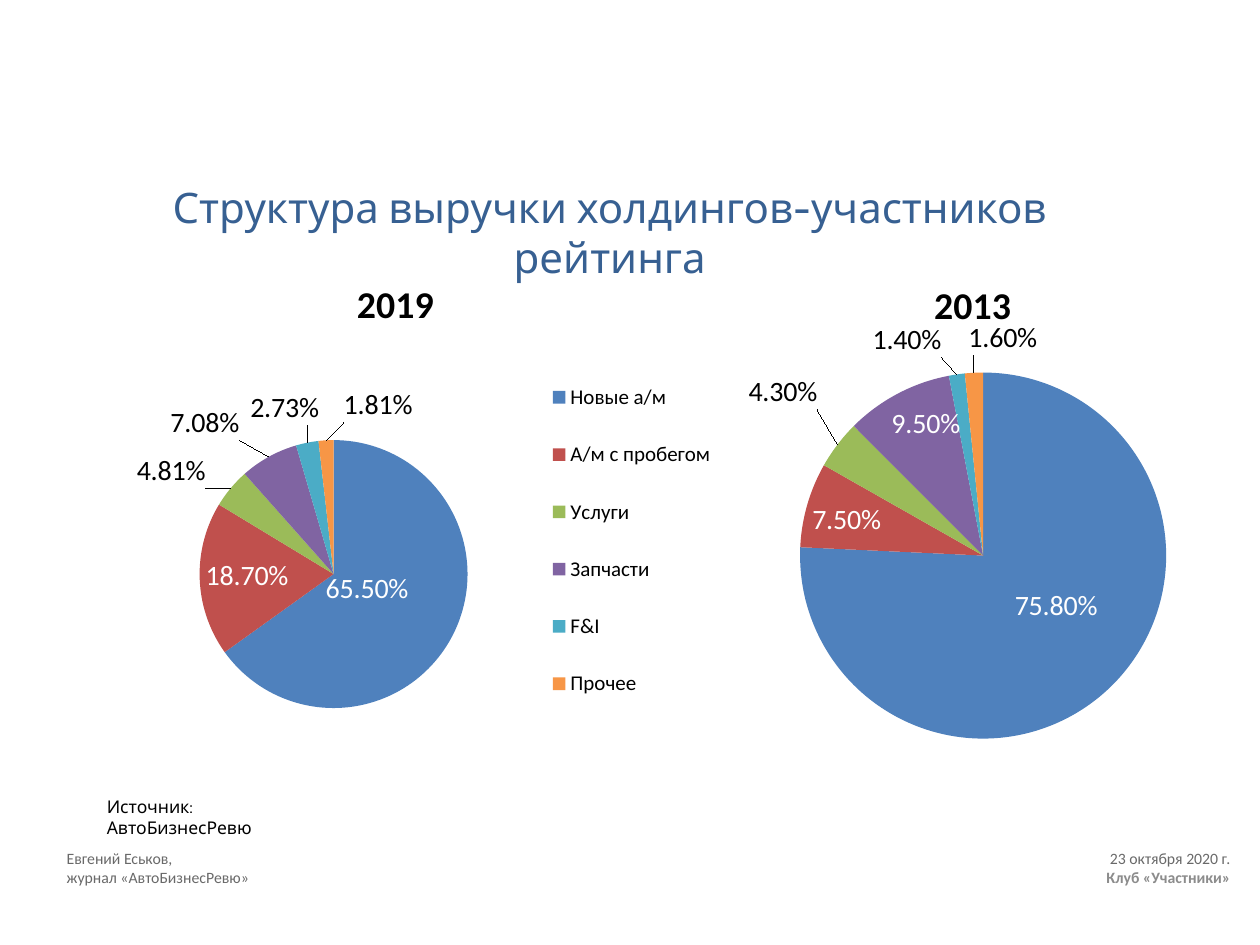
import pptx
import pptx.chart.data
import pptx.dml.color
import pptx.enum.chart
import pptx.enum.text
import pptx.oxml
import pptx.oxml.ns
import pptx.util

Pt = pptx.util.Pt
Spot = pptx.enum.chart.XL_LABEL_POSITION
Align = pptx.enum.text.PP_ALIGN
NAMES = ["Новые а/м", "А/м с пробегом", "Услуги", "Запчасти", "F&I", "Прочее"]


def tint(code):
    return pptx.dml.color.RGBColor.from_string(code)


def style(font, **vals):
    for key, val in vals.items():
        if key == "color":
            font.color.rgb = tint(val)
        else:
            setattr(font, key, val)


def place(node, index, vals, inner=False, edge=True):
    for old in node.findall(pptx.oxml.ns.qn("c:layout")):
        node.remove(old)
    tags = '<c:layoutTarget val="inner"/>' if inner else ""
    if edge:
        tags += '<c:xMode val="edge"/><c:yMode val="edge"/>'
    for key, val in zip("xywh", vals):
        tags += f'<c:{key} val="{val}"/>'
    node.insert(index, pptx.oxml.parse_xml(
        f'<c:layout {pptx.oxml.ns.nsdecls("c")}><c:manualLayout>{tags}'
        "</c:manualLayout></c:layout>"))


class Deck:
    """Holds the style and the current slide."""

    hues = ["4F81BD", "C0504D", "9BBB59", "8064A2", "4BACC6", "F79646"]
    body = "Calibri"
    head = "Cabin"

    def __init__(self, wide, high):
        self.show = pptx.Presentation()
        self.show.slide_width, self.show.slide_height = Pt(wide), Pt(high)
        self.slide = self.show.slides.add_slide(self.show.slide_layouts[6])

    def text(self, box, lines, align=Align.LEFT, tab=None, **look):
        frame = self.slide.shapes.add_textbox(*map(Pt, box)).text_frame
        frame.word_wrap = True
        for num, runs in enumerate(lines):
            para = frame.add_paragraph() if num else frame.paragraphs[0]
            para.alignment = align
            if tab:
                para._p.get_or_add_pPr().append(pptx.oxml.parse_xml(
                    f'<a:tabLst {pptx.oxml.ns.nsdecls("a")}>'
                    f'<a:tab pos="{Pt(tab)}" algn="r"/></a:tabLst>'))
            for words, extra in runs:
                run = para.add_run()
                run.text = words
                style(run.font, **{**look, **extra})
        return frame

    def pie(self, box, title, vals, plot, marks, key=None, spot=None):
        data = pptx.chart.data.CategoryChartData(number_format="0.00%")
        data.categories = NAMES
        data.add_series(title, vals)
        chart = self.slide.shapes.add_chart(
            pptx.enum.chart.XL_CHART_TYPE.PIE, *map(Pt, box), data).chart
        style(chart.font, name=self.body, size=Pt(18), color="000000")
        chart.has_title = True
        name = chart.chart_title.text_frame
        name.text = title
        style(name.paragraphs[0].runs[0].font, name=self.body, size=Pt(21.6),
              bold=True, color="000000")
        if spot:
            place(chart.chart_title._element, 1, spot)
        chart.has_legend = bool(key)
        if key:
            chart.legend.include_in_layout = False
            style(chart.legend.font, name=self.body, size=Pt(12), color="000000")
            place(chart.legend._element, 1, key)
        pie = chart.plots[0]
        pie.vary_by_categories = True
        place(chart._chartSpace.chart.plotArea, 0, plot, inner=True)
        row = pie.series[0]
        tags = row.data_labels
        tags.show_value = True
        tags.number_format, tags.number_format_is_linked = "0.00%", False
        style(tags.font, name=self.body, size=Pt(16), color="000000")
        for num, (hue, (inside, *shift)) in enumerate(zip(self.hues, marks)):
            point = row.points[num]
            point.format.fill.solid()
            point.format.fill.fore_color.rgb = tint(hue)
            label = point.data_label
            style(label.font, name=self.body, size=Pt(16),
                  color="FFFFFF" if inside else "000000")
            label.position = Spot.CENTER if inside else Spot.OUTSIDE_END
            place(label._get_or_add_dLbl(), 1, shift, edge=False)


def main():
    deck = Deck(720, 540)
    deck.text((36.7, 100, 623.5, 36),
              [[("Структура выручки холдингов-участников рейтинга", {})]],
              Align.CENTER, name=deck.head, size=Pt(24), color="376092")
    deck.pie((54, 145.5, 374.4, 294.5), "2019",
             [0.655, 0.187, 0.0481, 0.0708, 0.0273, 0.0181],
             (0.16, 0.36, 0.41, 0.52),
             [(True, -0.04, -0.03), (True, -0.03, 0), (False, -0.03, 0.01),
              (False, -0.04, -0.02), (False, 0.02, -0.02), (False, 0.08, -0.02)],
             key=(0.69, 0.19, 0.26, 0.73), spot=(0.39, 0.03))
    deck.pie((416.9, 145.5, 277.9, 289.4), "2013",
             [0.758, 0.075, 0.043, 0.095, 0.014, 0.016],
             (0.145, 0.233, 0.753, 0.723),
             [(True, 0.02, -0.03), (True, -0.1, -0.02), (False, -0.03, -0.06),
              (True, -0.03, -0.1), (False, -0.03, -0.02), (False, 0.06, -0.02)])
    foot = deck.text((31, 485.3, 680.4, 28.8),
                     [[("Евгений Еськов,\t23 октября 2020 г.", {})],
                      [("журнал «АвтоБизнесРевю»\t", {}),
                       ("Клуб «Участники»", {"color": "8C8C8C", "bold": True})]],
                     tab=665, name=deck.body, size=Pt(9), color="696969")
    foot.margin_top = foot.margin_bottom = 0
    deck.text((54, 451.4, 141.8, 19.4), [[("Источник: АвтоБизнесРевю", {})]],
              name=deck.head, size=Pt(10), color="000000")
    deck.show.save("out.pptx")


if __name__ == "__main__":
    main()
